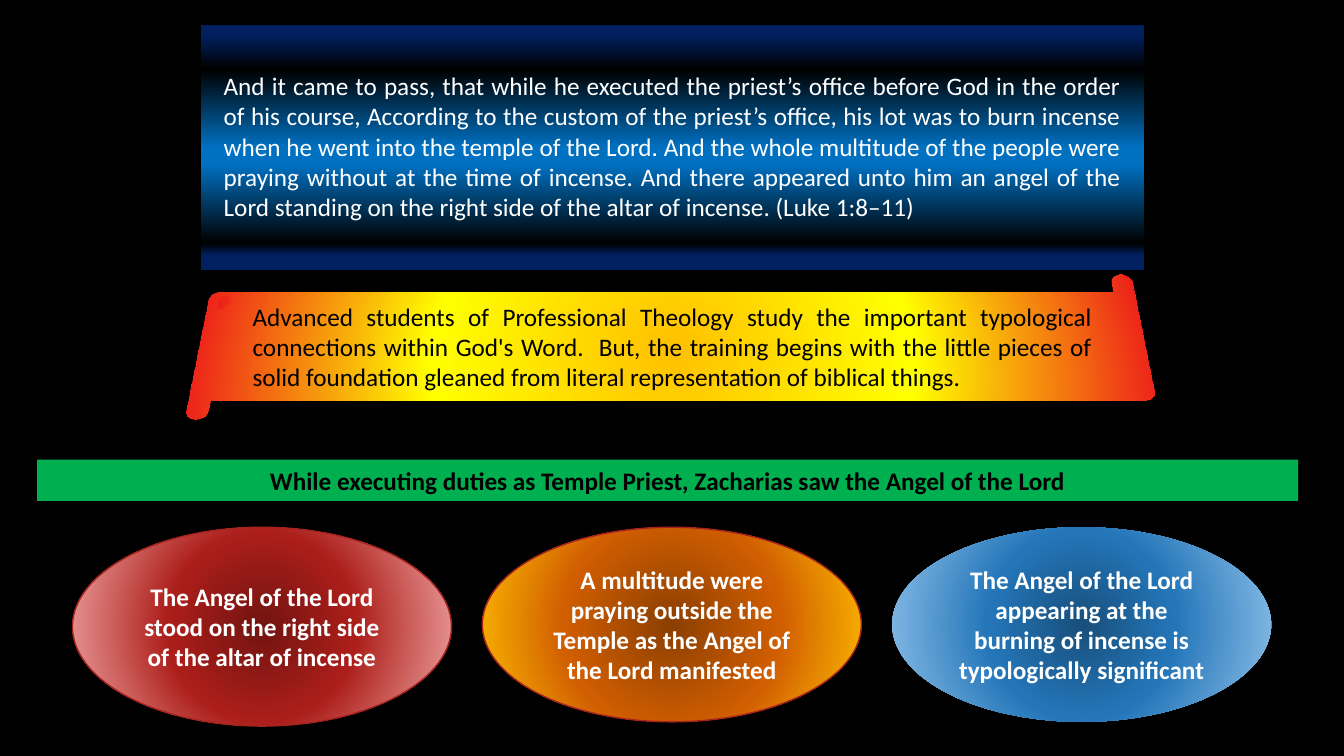
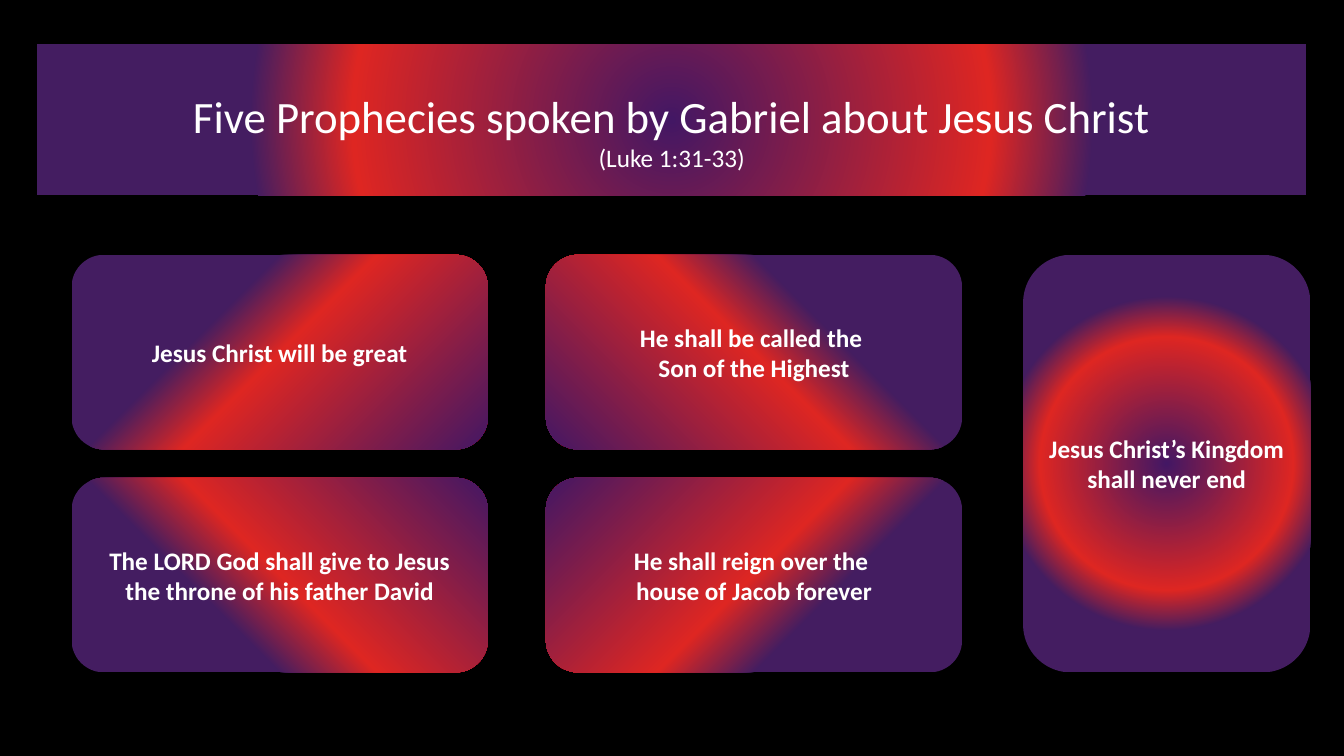
from lxml.etree import SubElement
from pptx import Presentation
from pptx.dml.color import RGBColor
from pptx.enum.shapes import MSO_SHAPE
from pptx.enum.text import MSO_ANCHOR, MSO_AUTO_SIZE, PP_ALIGN
from pptx.oxml.ns import qn
from pptx.util import Pt

FONT = "Calibri"
BODY_SIZE = 18
TITLE_SIZE = 32
COLORS = {
    "black": "000000", "white": "FFFFFF", "green": "00B050", "outline": "A5221E",
    "navy": "002060", "blue": "0070C0",
    "gold": "FFC000", "yellow": "FFFF00", "scarlet": "ED211A",
    "red dark": "721411", "red": "AC1E1A", "red light": "F2ABA9",
    "amber dark": "8B3F01", "amber": "D15E01",
    "sky dark": "184F7B", "sky": "2476B9", "sky light": "92C3EA",
    "violet": "431764", "flame": "DE2622", "plum": "441D61",
}
# Gradient stops: (percent, colour name)
GRADIENTS = {
    "night": [(4, "navy"), (18, "black"), (50, "blue"), (57, "blue"), (89, "black"), (94, "navy")],
    "scroll": [(0, "gold"), (50, "yellow"), (100, "scarlet")],
    "red": [(0, "red dark"), (44, "red"), (100, "red light")],
    "amber": [(0, "amber dark"), (51, "amber"), (100, "gold")],
    "sky": [(0, "sky dark"), (44, "sky"), (100, "sky light")],
    "prophecy": [(0, "violet"), (50, "flame"), (66, "plum")],
}
CENTER = (50, 50)


def rgb(name):
    return RGBColor.from_string(COLORS[name])


def add_blank_slide(presentation):
    slide = presentation.slides.add_slide(presentation.slide_layouts[6])
    slide.background.fill.solid()
    slide.background.fill.fore_color.rgb = rgb("black")
    return slide


def fill_gradient(shape, name, focus=None):
    """Radial gradient around focus (percent across, percent down), else top to bottom."""
    shape.fill.gradient()
    gradient = shape._element.spPr.find(qn("a:gradFill"))
    for child in list(gradient):
        gradient.remove(child)
    stops = SubElement(gradient, qn("a:gsLst"))
    for percent, color in GRADIENTS[name]:
        stop = SubElement(stops, qn("a:gs"), pos=str(percent * 1000))
        SubElement(stop, qn("a:srgbClr"), val=COLORS[color])
    if focus is None:
        SubElement(gradient, qn("a:lin"), ang="5400000", scaled="0")
        return
    across, down = focus
    radial = SubElement(gradient, qn("a:path"), path="circle")
    edges = {"l": across, "t": down, "r": 100 - across, "b": 100 - down}
    SubElement(radial, qn("a:fillToRect"),
               {edge: str(percent * 1000) for edge, percent in edges.items()})


def add_panel(slide, kind, box, gradient=None, focus=None, color=None, outline=None):
    shape = slide.shapes.add_shape(kind, *(Pt(length) for length in box))
    shape.shadow.inherit = False
    if gradient:
        fill_gradient(shape, gradient, focus)
    else:
        shape.fill.solid()
        shape.fill.fore_color.rgb = rgb(color)
    if outline:
        shape.line.color.rgb = rgb(outline)
        shape.line.width = Pt(1)
    else:
        shape.line.fill.background()
    return shape


def write_lines(shape, lines, color="white", bold=False, align=PP_ALIGN.CENTER, sizes=None):
    frame = shape.text_frame
    for index, line in enumerate(lines):
        paragraph = frame.paragraphs[0] if index == 0 else frame.add_paragraph()
        paragraph.alignment = align
        run = paragraph.add_run()
        run.text = line
        run.font.name = FONT
        run.font.size = Pt(sizes[index] if sizes else BODY_SIZE)
        run.font.bold = bold
        run.font.color.rgb = rgb(color)


def write_label(shape, lines, color="white"):
    shape.text_frame.word_wrap = True
    shape.text_frame.vertical_anchor = MSO_ANCHOR.MIDDLE
    write_lines(shape, lines, color, bold=True)


def add_inset_text(slide, box, inset, lines, wrap=True, **style):
    """Text box held inside box by an inset across and down."""
    left, top, width, height = box
    across, down = inset
    text_box = slide.shapes.add_textbox(Pt(left + across), Pt(top + down),
                                        Pt(width - 2 * across), Pt(height - 2 * down))
    text_box.text_frame.word_wrap = wrap
    text_box.text_frame.auto_size = MSO_AUTO_SIZE.SHAPE_TO_FIT_TEXT
    write_lines(text_box, lines, **style)


def tilt_back(shape):
    scene = SubElement(shape._element.spPr, qn("a:scene3d"))
    SubElement(scene, qn("a:camera"), prst="perspectiveRelaxedModerately")
    SubElement(scene, qn("a:lightRig"), rig="threePt", dir="t")


def add_scripture(slide, box):
    add_panel(slide, MSO_SHAPE.RECTANGLE, box, "night")
    add_inset_text(slide, box, (9.4, 28.8), [
        "And it came to pass, that while he executed the priest’s office before God in the "
        "order of his course, According to the custom of the priest’s office, his lot was to "
        "burn incense when he went into the temple of the Lord. And the whole multitude of the "
        "people were praying without at the time of incense. And there appeared unto him an "
        "angel of the Lord standing on the right side of the altar of incense. (Luke 1:8–11)",
    ], align=PP_ALIGN.JUSTIFY)


def add_scroll(slide, box):
    scroll = add_panel(slide, MSO_SHAPE.HORIZONTAL_SCROLL, box, "scroll", CENTER)
    tilt_back(scroll)
    add_inset_text(slide, box, (30, 28.5), [
        "Advanced students of Professional Theology study the important typological "
        "connections within God's Word.  But, the training begins with the little pieces of "
        "solid foundation gleaned from literal representation of biblical things.",
    ], color="black", align=PP_ALIGN.JUSTIFY)


def add_ovals(slide, box):
    left, top, width, height = box
    oval_width = 270.7
    ovals = [
        ("red", "outline", 3,
         "The Angel of the Lord stood on the right side of the altar of incense"),
        ("amber", "outline", 0,
         "A multitude were praying outside the Temple as the Angel of the Lord manifested"),
        ("sky", None, 0,
         "The Angel of the Lord appearing at the burning of incense is typologically significant"),
    ]
    pitch = (width - oval_width) / (len(ovals) - 1)
    for index, (gradient, outline, extra, text) in enumerate(ovals):
        oval_box = (left + index * pitch, top, oval_width, height + extra)
        oval = add_panel(slide, MSO_SHAPE.OVAL, oval_box, gradient, CENTER, outline=outline)
        write_label(oval, [text])


def add_prophecy_title(slide, box):
    add_panel(slide, MSO_SHAPE.RECTANGLE, box, "prophecy", CENTER)
    add_inset_text(slide, box, (101, 28), [
        "Five Prophecies spoken by Gabriel about Jesus Christ",
        "(Luke 1:31-33)",
    ], wrap=False, sizes=[TITLE_SIZE, BODY_SIZE])


def add_prophecy_grid(slide, box):
    left, top, width, height = box
    card_width, card_height = 297.4, 139
    cards = [
        ["Jesus Christ will be great"],
        ["He shall be called the ", "Son of the Highest"],
        ["The LORD God shall give to Jesus the throne of his father David"],
        ["He shall reign over the ", "house of Jacob forever"],
    ]
    for index, lines in enumerate(cards):
        row, column = divmod(index, 2)
        card_box = (left + column * (width - card_width),
                    top + row * (height - card_height), card_width, card_height)
        # Each gradient starts at the corner nearest the middle of the grid
        focus = (100 * (1 - column), 100 * (1 - row))
        card = add_panel(slide, MSO_SHAPE.ROUNDED_RECTANGLE, card_box, "prophecy", focus)
        write_label(card, lines)


def build_temple_slide(presentation):
    slide = add_blank_slide(presentation)
    add_scripture(slide, (143.3, 18, 674, 175))
    add_scroll(slide, (143.3, 182.9, 674, 126.7))
    # Green heading band
    band = add_panel(slide, MSO_SHAPE.RECTANGLE, (26.6, 328.3, 900.7, 29.5), color="green")
    write_label(band, ["While executing duties as Temple Priest, Zacharias saw the Angel of the Lord"],
                color="black")
    add_ovals(slide, (51.8, 376.6, 856.2, 139))


def build_prophecy_slide(presentation):
    slide = add_blank_slide(presentation)
    add_prophecy_title(slide, (26.6, 31.7, 906.5, 108))
    add_prophecy_grid(slide, (51.1, 182, 636.2, 298.3))
    # Tall card beside the grid
    card = add_panel(slide, MSO_SHAPE.ROUNDED_RECTANGLE, (730.8, 182, 205.2, 298.3),
                     "prophecy", CENTER)
    write_label(card, ["Jesus Christ’s Kingdom shall never end"])


def main():
    presentation = Presentation()
    presentation.slide_width = Pt(960)
    presentation.slide_height = Pt(540)
    build_temple_slide(presentation)
    build_prophecy_slide(presentation)
    presentation.save("out.pptx")


if __name__ == "__main__":
    main()
